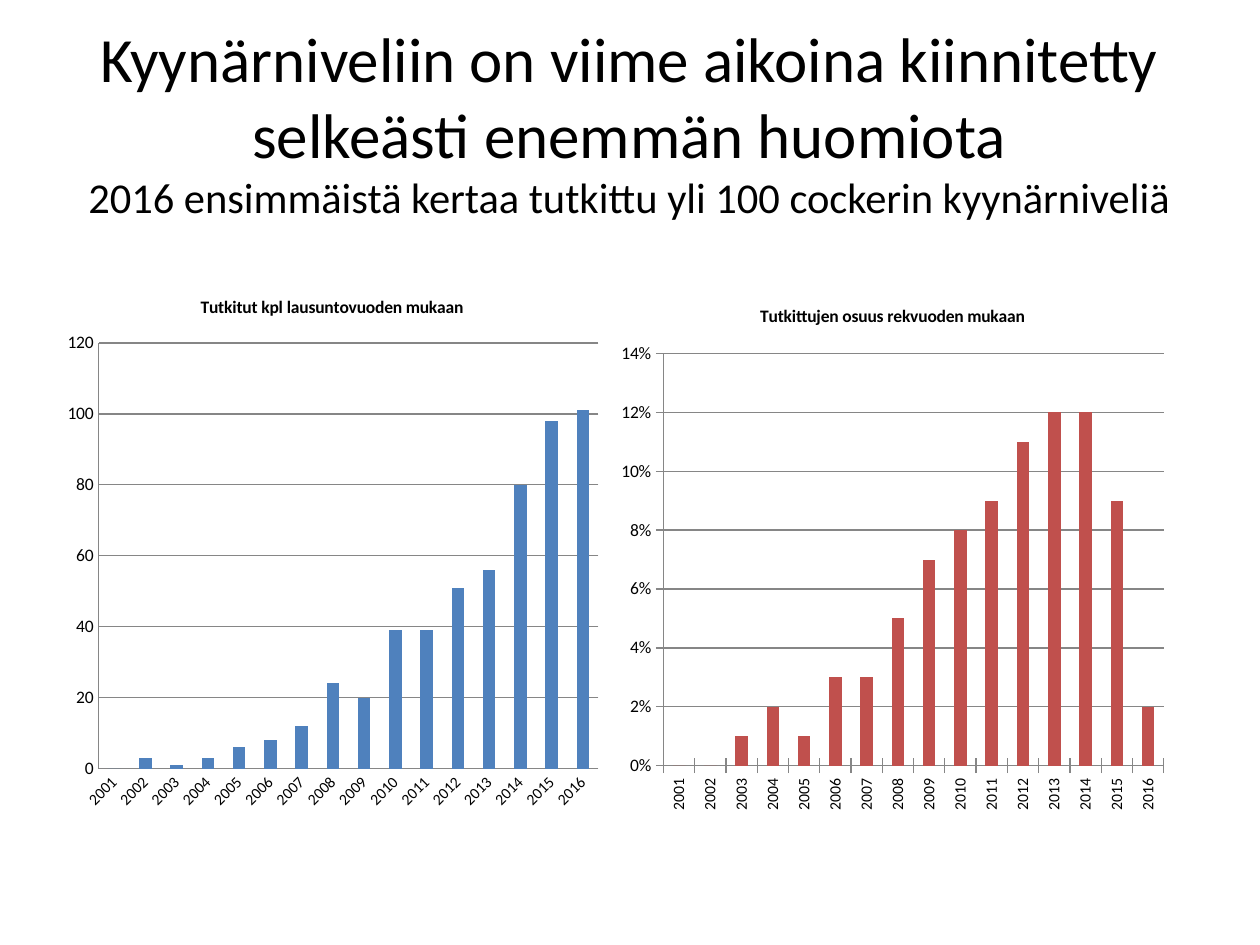
from dataclasses import dataclass

from lxml import etree
from pptx import Presentation
from pptx import util as u
from pptx.chart.data import CategoryChartData
from pptx.dml.color import RGBColor
from pptx.enum import chart as ch
from pptx.enum import text
from pptx.oxml.ns import qn

BLACK = RGBColor(0x00, 0x00, 0x00)
GREY = RGBColor(0x86, 0x86, 0x86)
BLUE = RGBColor(0x4F, 0x81, 0xBD)
RED = RGBColor(0xC0, 0x50, 0x4D)
FONT = "Calibri"
YEARS = [str(year) for year in range(2001, 2017)]


@dataclass
class YearChart:
    """One column chart by year; box is in cm, plot in fractions of the chart."""
    title: str
    box: tuple[float, float, float, float]
    plot: tuple[float, float, float, float]
    values: list[float]
    color: RGBColor
    top: float
    step: float
    number_format: str
    tick: ch.XL_TICK_MARK
    label_angle: int


CHARTS = [
    YearChart("Tutkitut kpl lausuntovuoden mukaan",
              (1.09, 5.54, 11.2, 11), (0.08, 0.125, 0.9, 0.78),
              [0, 3, 1, 3, 6, 8, 12, 24, 20, 39, 39, 51, 56, 80, 98, 101],
              BLUE, 120, 20, "General", ch.XL_TICK_MARK.NONE, -45),
    YearChart("Tutkittujen osuus rekvuoden mukaan",
              (12.29, 5.72, 11.4, 10.8), (0.095, 0.13, 0.885, 0.77),
              [percent / 100 for percent in
               (0, 0, 1, 2, 1, 3, 3, 5, 7, 8, 9, 11, 12, 12, 9, 2)],
              RED, 0.14, 0.02, "0%", ch.XL_TICK_MARK.CROSS, -90),
]


def style_font(font, size: float, bold: bool = False) -> None:
    font.name, font.size, font.bold = FONT, u.Pt(size), bold
    font.color.rgb = BLACK


def place_plot(chart, plot: tuple[float, float, float, float]) -> None:
    """Fix the inner plot area inside the chart."""
    area = chart.plots[0]._element.getparent()
    layout = area.find(qn("c:layout"))
    if layout is None:
        layout = etree.Element(qn("c:layout"))
        area.insert(0, layout)
    manual = etree.SubElement(layout, qn("c:manualLayout"))
    settings = [("layoutTarget", "inner"), ("xMode", "edge"), ("yMode", "edge")]
    settings += zip("xywh", plot)
    for tag, value in settings:
        etree.SubElement(manual, qn(f"c:{tag}")).set("val", str(value))


def draw_chart(slide, item: YearChart) -> None:
    data = CategoryChartData(number_format=item.number_format)
    data.categories = YEARS
    data.add_series("Series 1", item.values)
    chart = slide.shapes.add_chart(ch.XL_CHART_TYPE.COLUMN_CLUSTERED,
                                   *map(u.Cm, item.box), data).chart
    chart.has_legend = False
    style_font(chart.font, 10)

    # Title
    heading = chart.chart_title.text_frame
    heading.text = item.title
    style_font(heading.paragraphs[0].font, 10, bold=True)
    chart.chart_title.include_in_layout = False

    # Columns
    columns = chart.plots[0]
    columns.gap_width = 150
    columns.vary_by_categories = False
    fill = columns.series[0].format.fill
    fill.solid()
    fill.fore_color.rgb = item.color

    # Axes
    years, amounts = chart.category_axis, chart.value_axis
    for axis, size in ((years, 9), (amounts, 10)):
        axis.major_tick_mark = item.tick
        axis.minor_tick_mark = ch.XL_TICK_MARK.NONE
        style_font(axis.tick_labels.font, size)
    amounts.has_major_gridlines = True
    for line in (years.format.line, amounts.format.line,
                 amounts.major_gridlines.format.line):
        line.color.rgb = GREY
        line.width = u.Pt(0.75)
    amounts.minimum_scale, amounts.maximum_scale = 0, item.top
    amounts.major_unit = item.step
    amounts.tick_labels.number_format = item.number_format
    amounts.tick_labels.number_format_is_linked = False
    label_body = years._element.find(qn("c:txPr")).find(qn("a:bodyPr"))
    label_body.set("rot", str(item.label_angle * 60000))
    label_body.set("vert", "horz")

    place_plot(chart, item.plot)


def draw_title(slide) -> None:
    title = slide.shapes.title
    title.left, title.top = u.Cm(1.27), u.Cm(0.76)
    title.width, title.height = u.Cm(22.83), u.Cm(3.35)
    frame = title.text_frame
    frame.word_wrap = True
    frame.auto_size = text.MSO_AUTO_SIZE.NONE
    frame.vertical_anchor = text.MSO_ANCHOR.MIDDLE
    paragraph = frame.paragraphs[0]
    paragraph.alignment = text.PP_ALIGN.CENTER
    main = paragraph.add_run()
    main.text = ("Kyynärniveliin on viime aikoina kiinnitetty "
                 "selkeästi enemmän huomiota")
    paragraph.add_line_break()
    subtitle = paragraph.add_run()
    subtitle.text = ("2016 ensimmäistä kertaa tutkittu yli 100 cockerin "
                     "kyynärniveliä")
    style_font(main.font, 36)
    style_font(subtitle.font, 24.3)


def main() -> None:
    deck = Presentation()
    deck.slide_width, deck.slide_height = u.Cm(25.4), u.Cm(19.05)
    slide = deck.slides.add_slide(deck.slide_layouts.get_by_name("Title Only"))
    draw_title(slide)
    for item in CHARTS:
        draw_chart(slide, item)
    deck.save("out.pptx")


if __name__ == "__main__":
    main()
